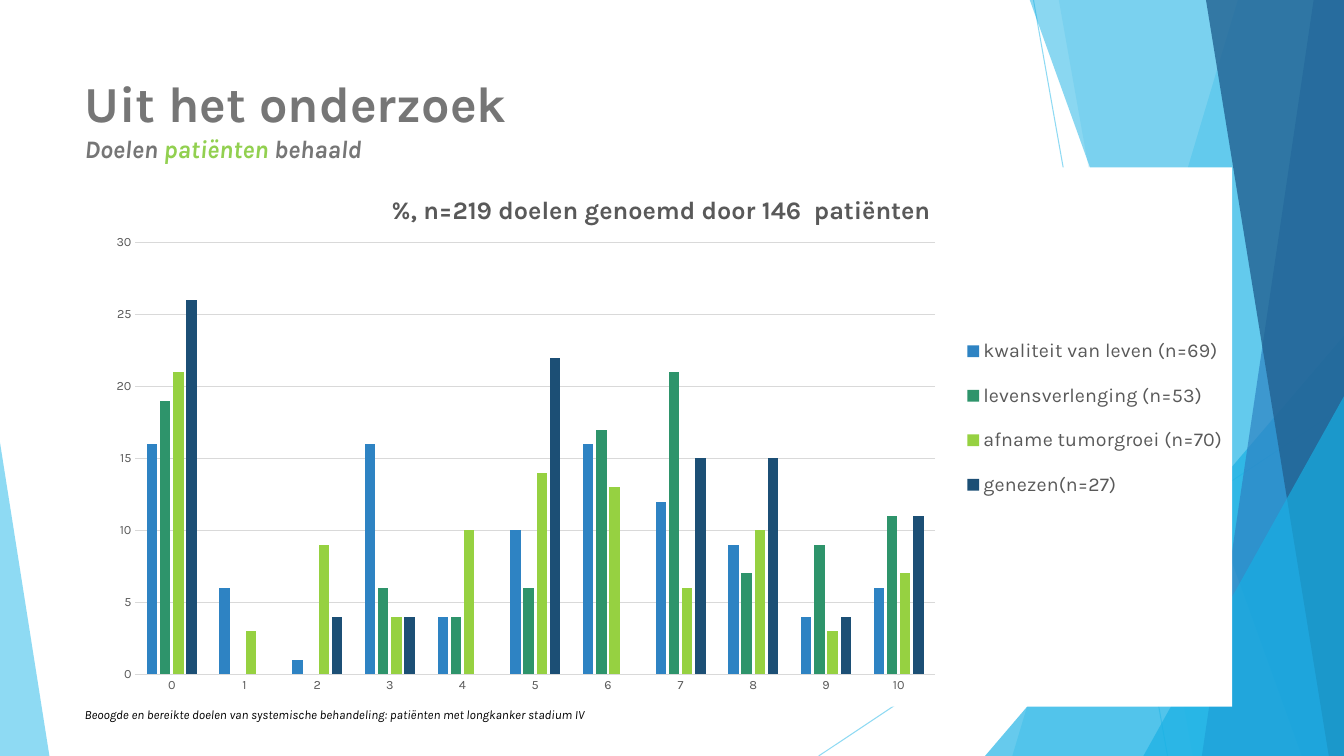
from lxml.etree import SubElement
from pptx import Presentation
from pptx.chart.data import CategoryChartData as ChartData
from pptx.dml.color import RGBColor
from pptx.enum.chart import XL_CHART_TYPE as Kind, XL_LEGEND_POSITION as Side, XL_TICK_MARK as Tick
from pptx.enum.shapes import MSO_CONNECTOR as Link, MSO_SHAPE as Form
from pptx.enum.text import MSO_ANCHOR as Anchor
from pptx.oxml import parse_xml
from pptx.oxml.ns import nsdecls, qn
from pptx.util import Inches, Pt

FONT = "Karla"
WIDTH, HEIGHT = 13.33, 7.5
SKY = RGBColor(0x5F, 0xCB, 0xEF)
CYAN = RGBColor(0x17, 0xB0, 0xE4)
BLUE = RGBColor(0x2E, 0x83, 0xC3)
STEEL = RGBColor(0x22, 0x62, 0x92)
TEAL = RGBColor(0x2E, 0x94, 0x6B)
LIME = RGBColor(0x96, 0xD1, 0x41)
NAVY = RGBColor(0x1C, 0x4F, 0x75)
GREEN = RGBColor(0x92, 0xD0, 0x50)
GREY = RGBColor(0x76, 0x76, 0x76)
DARK = RGBColor(0x59, 0x59, 0x59)
PALE = RGBColor(0xD9, 0xD9, 0xD9)
BLACK = RGBColor(0, 0, 0)

SERIES = [
    ("kwaliteit van leven (n=69)", BLUE, (16, 6, 1, 16, 4, 10, 16, 12, 9, 4, 6)),
    ("levensverlenging (n=53)", TEAL, (19, None, None, 6, 4, 6, 17, 21, 7, 9, 11)),
    ("afname tumorgroei (n=70)", LIME, (21, 3, 9, 4, 10, 14, 13, 6, 10, 3, 7)),
    ("genezen(n=27)", NAVY, (26, None, 4, 4, None, 22, None, 15, 15, 4, 11)),
]


def style(font, size, color, bold=False, italic=False):
    font.name, font.size = FONT, Pt(size)
    font.bold, font.italic = bold, italic
    font.color.rgb = color


def fade(shape, alpha):
    color = shape._element.xpath("./p:spPr//a:srgbClr")[0]
    SubElement(color, qn("a:alpha")).set("val", str(alpha * 1000))


def tint(shape, color, alpha):
    shape.shadow.inherit = False
    shape.fill.solid()
    shape.fill.fore_color.rgb = color
    fade(shape, alpha)
    shape.line.fill.background()


def add_ray(slide, *ends):
    ray = slide.shapes.add_connector(Link.STRAIGHT, *map(Inches, ends))
    ray.line.color.rgb = SKY
    ray.line.width = Pt(0.75)
    fade(ray, 70)
    SubElement(ray._element.spPr, qn("a:effectLst"))


def add_sheet(slide, top, base, color, alpha):
    points = [(top, -0.01), (WIDTH, -0.01), (WIDTH, HEIGHT), (base, HEIGHT)]
    first, *rest = [(Inches(x), Inches(y)) for x, y in points]
    outline = slide.shapes.build_freeform(*first)
    outline.add_line_segments(rest)
    tint(outline.convert_to_shape(), color, alpha)


def add_peak(slide, left, top, width, apex, color, alpha):
    box = map(Inches, (left, top, width, HEIGHT - top))
    peak = slide.shapes.add_shape(Form.ISOSCELES_TRIANGLE, *box)
    peak.adjustments[0] = apex
    tint(peak, color, alpha)


def add_text(slide, box, lines, anchor=Anchor.TOP):
    frame = slide.shapes.add_textbox(*map(Inches, box)).text_frame
    frame.word_wrap = True
    frame.vertical_anchor = anchor
    para = frame.paragraphs[0]
    for row, parts in enumerate(lines):
        if row:
            para.add_line_break()
        for text, *look in parts:
            run = para.add_run()
            run.text = text
            style(run.font, *look)


def place(part, index, inner=False, **spots):
    for old in part.findall(qn("c:layout")):
        part.remove(old)
    target = '<c:layoutTarget val="inner"/>' if inner else ""
    modes = "".join(f'<c:{key}Mode val="edge"/>' for key in spots if key in "xy")
    sizes = "".join(f'<c:{key} val="{val}"/>' for key, val in spots.items())
    part.insert(index, parse_xml(
        f'<c:layout {nsdecls("c")}><c:manualLayout>{target}{modes}{sizes}'
        "</c:manualLayout></c:layout>"))


def set_axis(axis):
    axis.major_tick_mark = axis.minor_tick_mark = Tick.NONE
    style(axis.tick_labels.font, 9, DARK)


def add_goals(slide):
    data = ChartData()
    data.categories = [str(score) for score in range(11)]
    for name, _, values in SERIES:
        data.add_series(name, values)
    box = map(Inches, (0.89, 1.66, 11.33, 5.35))
    chart = slide.shapes.add_chart(Kind.COLUMN_CLUSTERED, *box, data).chart
    style(chart.font, 10, BLACK)

    plot = chart.plots[0]
    plot.vary_by_categories = False
    plot.gap_width, plot.overlap = 219, -27
    for series, (_, color, _) in zip(plot.series, SERIES):
        series.format.fill.solid()
        series.format.fill.fore_color.rgb = color

    cat, val = chart.category_axis, chart.value_axis
    set_axis(cat)
    set_axis(val)
    val.minimum_scale, val.maximum_scale, val.major_unit = 0, 30, 5
    val.format.line.fill.background()
    for edge in (cat.format.line, val.major_gridlines.format.line):
        edge.color.rgb = PALE
        edge.width = Pt(0.75)

    head = chart.chart_title.text_frame.paragraphs[0]
    head.text = "%, n=219 doelen genoemd door 146  patiënten"
    style(head.runs[0].font, 18, DARK, True)
    chart.has_legend = True
    chart.legend.position = Side.RIGHT
    chart.legend.include_in_layout = False
    style(chart.legend.font, 14, DARK)

    root = chart.element
    place(root.xpath("c:chart/c:title")[0], 1, x=0.26, y=0.04)
    place(root.xpath("c:chart/c:plotArea")[0], 0, True, x=0.04, y=0.14, w=0.7, h=0.8)
    place(root.xpath("c:chart/c:legend")[0], 1, x=0.76, y=0.28, w=0.24, h=0.37)
    root.find(qn("c:chart")).addnext(parse_xml(
        f'<c:spPr {nsdecls("c", "a")}><a:solidFill><a:srgbClr val="FFFFFF"/>'
        "</a:solidFill><a:ln><a:noFill/></a:ln></c:spPr>"))


def add_decor(slide):
    add_ray(slide, 10.25, 0, 11.58, HEIGHT)
    add_ray(slide, WIDTH, 4.03, 8.12, HEIGHT)
    add_sheet(slide, 12.28, 10.04, SKY, 36)
    add_sheet(slide, 10.5, 11.83, SKY, 20)
    add_peak(slide, 9.77, 3.33, 3.56, 1, CYAN, 66)
    add_sheet(slide, 10.21, 12.91, CYAN, 50)
    add_sheet(slide, 13.03, 11.92, BLUE, 70)
    add_sheet(slide, 11.96, 13.18, STEEL, 80)
    add_peak(slide, 11.34, 3.93, 1.99, 1, CYAN, 66)
    add_peak(slide, 0, 4.39, 0.49, 0, SKY, 70)


def main():
    deck = Presentation()
    deck.slide_width, deck.slide_height = Inches(WIDTH), Inches(HEIGHT)
    slide = deck.slides.add_slide(deck.slide_layouts[6])
    add_decor(slide)
    add_goals(slide)
    add_text(slide, (0.74, 0.67, 9.4, 1.44), [
        [("Uit het onderzoek", 36, GREY, True)],
        [("Doelen ", 18, GREY, True, True),
         ("patiënten", 18, GREEN, True, True),
         (" behaald", 18, GREY, True, True)],
    ])
    note = "Beoogde en bereikte doelen van systemische behandeling: patiënten met longkanker stadium IV"
    add_text(slide, (0.74, 6.89, 6.89, 0.4), [[(note, 9, BLACK, False, True)]], Anchor.MIDDLE)
    deck.save("out.pptx")


if __name__ == "__main__":
    main()
